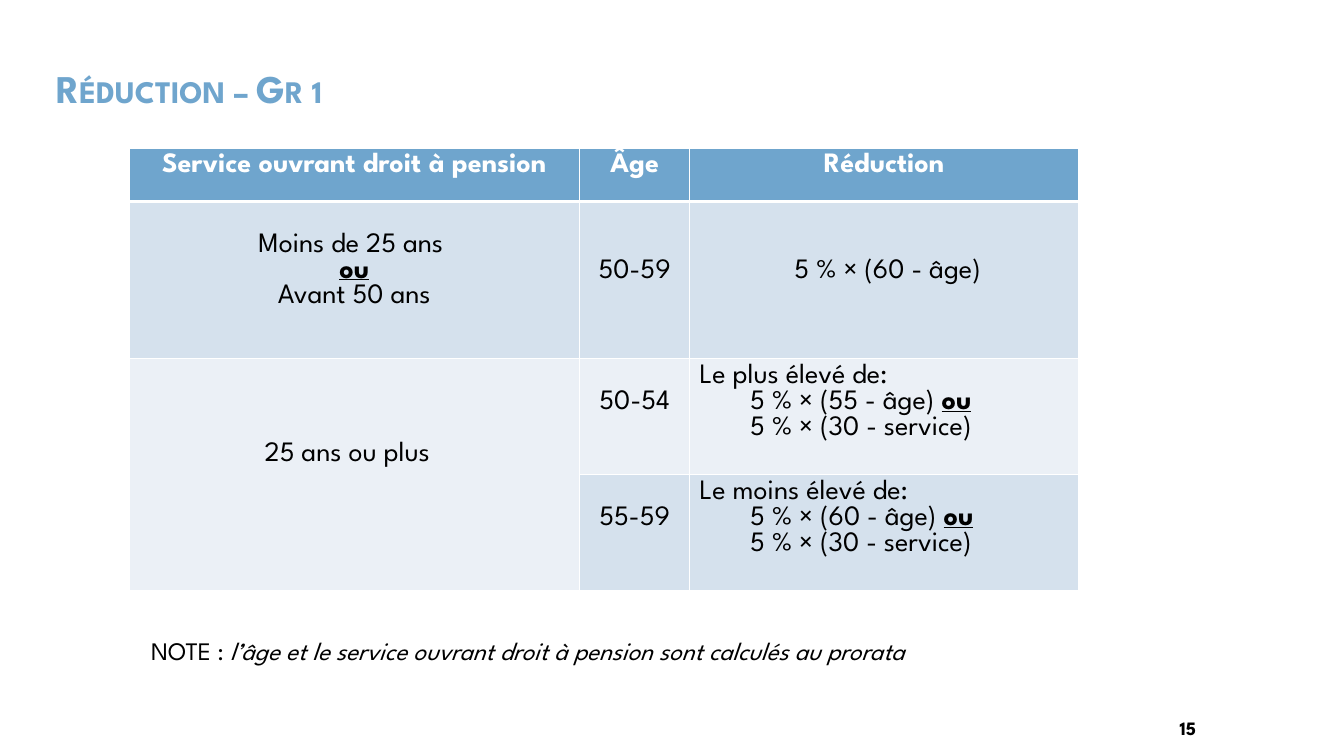
from dataclasses import dataclass

from lxml import etree
from pptx import Presentation
from pptx.dml.color import RGBColor
from pptx.enum.shapes import MSO_SHAPE
from pptx.enum.text import MSO_ANCHOR, PP_ALIGN
from pptx.oxml.ns import qn
from pptx.util import Inches, Pt

LEFT, CENTER, RIGHT = PP_ALIGN.LEFT, PP_ALIGN.CENTER, PP_ALIGN.RIGHT
MIDDLE = MSO_ANCHOR.MIDDLE
RECTANGLE = MSO_SHAPE.RECTANGLE


@dataclass(frozen=True)
class Theme:
    font: str = "League Spartan"
    blue: str = "6FA5CD"
    band_dark: str = "D5E1ED"
    band_light: str = "EBF0F6"
    white: str = "FFFFFF"
    black: str = "000000"
    title_size: float = 28
    table_size: float = 20
    note_size: float = 18
    number_size: float = 13.5


THEME = Theme()

# A paragraph is a list of (text, style letters): b bold, u underlined, i italic.
TITLE = [("Réduction – Gr 1", "b")]
NOTE = [("NOTE : ", ""),
        ("l’âge et le service ouvrant droit à pension sont calculés au prorata", "i")]
PAGE_NUMBER = [("15", "b")]
OR = ("ou", "bu")
HEADINGS = ["Service ouvrant droit à pension", "Âge", "Réduction"]


def choice(heading, age_limit):
    return [[(heading, "")],
            [(f"5 % × ({age_limit} - âge) ", ""), OR],
            [("5 % × (30 - service)", "")]]


# (row, column): paragraphs, lines left free above, left and right insets
CENTERED_CELLS = {
    (1, 0): ([[("Moins de 25 ans ", "")], [OR], [("Avant 50 ans", "")]], 1, 0.1, 0.1),
    (1, 1): ([[("50-59", "")]], 2, 0.1, 0.1),
    (1, 2): ([[("5 % × (60 - âge)", "")]], 2, 0.17, 0.1),
    (2, 0): ([[("25 ans ou plus", "")]], 3, 0.1, 0.24),
    (2, 1): ([[("50-54", "")]], 1, 0.1, 0.1),
    (3, 1): ([[("55-59", "")]], 1, 0.1, 0.1),
}
CHOICE_CELLS = {(2, 2): choice("Le plus élevé de:", 55),
                (3, 2): choice("Le moins élevé de:", 60)}

COLUMNS = [4.47, 1.09, 3.86]
ROWS = [0.53, 1.56, 1.15, 1.15]
ROW_FILLS = [THEME.blue, THEME.band_dark, THEME.band_light, THEME.band_dark]
LINE_HEIGHT = Pt(18.5)
CELL_INSET = Inches(0.05)
RULE, HEADER_RULE = 1, 3


def write(paragraph, runs, size, color=THEME.black, align=LEFT):
    paragraph.alignment = align
    for text, style in runs:
        run = paragraph.add_run()
        run.text = text
        font = run.font
        font.name, font.size = THEME.font, Pt(size)
        font.color.rgb = RGBColor.from_string(color)
        font.bold, font.underline, font.italic = (mark in style for mark in "bui")


def add_line(slide, box, runs, size, align=LEFT):
    frame = slide.shapes.add_textbox(*map(Inches, box)).text_frame
    frame.word_wrap = True
    write(frame.paragraphs[0], runs, size, align=align)


def add_title(slide):
    panel = slide.shapes.add_shape(RECTANGLE, *map(Inches, (0.46, 0.63, 3.39, 0.55)))
    panel.shadow.inherit = False
    panel.fill.solid()
    panel.fill.fore_color.rgb = RGBColor.from_string(THEME.white)
    panel.line.fill.background()
    frame = panel.text_frame
    frame.word_wrap = True
    frame.vertical_anchor = MIDDLE
    title = frame.paragraphs[0]
    write(title, TITLE, THEME.title_size, THEME.blue)
    title.line_spacing = 0.9
    title.runs[0].font._element.set("cap", "small")


def add_border(cell, side, width):
    line = etree.SubElement(cell._tc.get_or_add_tcPr(), qn(f"a:ln{side}"), w=str(Pt(width)))
    fill = etree.SubElement(line, qn("a:solidFill"))
    etree.SubElement(fill, qn("a:srgbClr"), val=THEME.white)


def style_cell(cell, row):
    for side in "LRTB":
        add_border(cell, side, HEADER_RULE if (row, side) == (0, "B") else RULE)
    cell.fill.solid()
    cell.fill.fore_color.rgb = RGBColor.from_string(ROW_FILLS[row])


def write_cell(cell, paragraphs, color=THEME.black, align=CENTER):
    frame = cell.text_frame
    for index, runs in enumerate(paragraphs):
        paragraph = frame.add_paragraph() if index else frame.paragraphs[0]
        write(paragraph, runs, THEME.table_size, color, align)


def add_reduction_table(slide):
    table = slide.shapes.add_table(
        len(ROWS), len(COLUMNS), Inches(1.28), Inches(1.47),
        Inches(sum(COLUMNS)), Inches(sum(ROWS))).table
    table.first_row = table.horz_banding = False
    for column, width in zip(table.columns, COLUMNS):
        column.width = Inches(width)
    for index, (row, height) in enumerate(zip(table.rows, ROWS)):
        row.height = Inches(height)
        for cell in row.cells:
            style_cell(cell, index)
    table.cell(2, 0).merge(table.cell(3, 0))

    for column, heading in enumerate(HEADINGS):
        write_cell(table.cell(0, column), [[(heading, "b")]], THEME.white)
    for place, (paragraphs, free_lines, left, right) in CENTERED_CELLS.items():
        cell = table.cell(*place)
        cell.margin_top = CELL_INSET + free_lines * LINE_HEIGHT
        cell.margin_left, cell.margin_right = Inches(left), Inches(right)
        write_cell(cell, paragraphs)
    for place, paragraphs in CHOICE_CELLS.items():
        cell = table.cell(*place)
        write_cell(cell, paragraphs, align=LEFT)
        for option in cell.text_frame.paragraphs[1:]:
            option.level = 1
            properties = option._p.get_or_add_pPr()
            properties.set("marL", str(Inches(0.5)))
            properties.set("indent", "0")


def main():
    deck = Presentation()
    deck.slide_width, deck.slide_height = Inches(13.33), Inches(7.5)
    slide = deck.slides.add_slide(deck.slide_layouts[6])
    add_reduction_table(slide)
    add_title(slide)
    add_line(slide, (9.71, 7.06, 2.25, 0.3), PAGE_NUMBER, THEME.number_size, RIGHT)
    add_line(slide, (1.4, 6.25, 9.31, 0.4), NOTE, THEME.note_size)
    deck.save("out.pptx")


if __name__ == "__main__":
    main()
